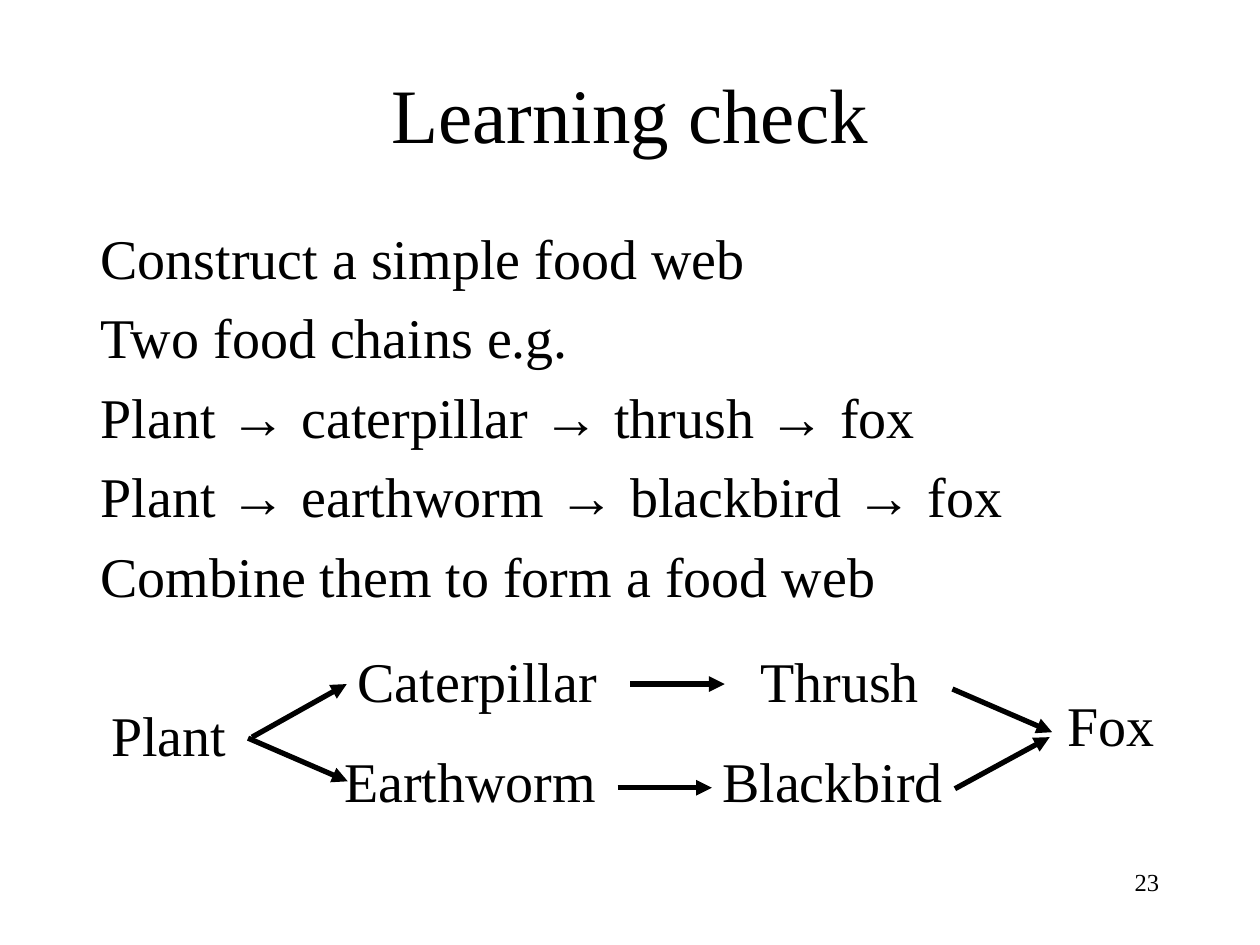
from lxml import etree
from pptx import Presentation
from pptx.dml.color import RGBColor
from pptx.enum import shapes, text
from pptx.oxml import ns
from pptx.util import Cm, Pt

COLORS = {"ink": "000000", "paper": "FFFFFF"}
FONT, ARROW_FONT = "Times New Roman", "Arial"
ARROW = "→ "
INSET = Cm(0.13)

INSTRUCTIONS = [
    "Construct a simple food web",
    "Two food chains e.g.",
    "Plant → caterpillar → thrush → fox",
    "Plant → earthworm → blackbird → fox",
    "Combine them to form a food web",
]

# Lines, left, top, width, height (cm), alignment
WEB_LABELS = [
    (["Plant"], 2.11, 14, 2.97, 1.52, "LEFT"),
    (["Caterpillar", "Earthworm "], 6.35, 12.9, 6.55, 3.5, "CENTER"),
    (["Thrush", "Blackbird "], 14.07, 12.9, 5.72, 3.5, "CENTER"),
    (["Fox"], 21.39, 13.79, 3.18, 1.52, "LEFT"),
]

# Start x, start y, end x, end y (cm)
WEB_ARROWS = [
    (5.08, 14.86, 6.99, 13.79),    # plant to caterpillar
    (5, 14.88, 7.01, 15.75),       # plant to earthworm
    (19.25, 15.9, 21.16, 14.86),   # blackbird to fox
    (19.2, 13.89, 21.21, 14.76),   # thrush to fox
    (12.7, 13.79, 14.61, 13.79),   # caterpillar to thrush
    (12.45, 15.88, 14.35, 15.88),  # earthworm to blackbird
]


def color(name):
    return RGBColor.from_string(COLORS[name])


def add_run(paragraph, words, size, font):
    run = paragraph.add_run()
    run.text = words
    run.font.size = Pt(size)
    run.font.name = font
    run.font.color.rgb = color("ink")


def add_text(slide, lines, left, top, width, height, *, size=32,
             align="LEFT", anchor="TOP", gap=0, wrap=True):
    """Add one paragraph per line, with the arrows in their own font."""
    box = slide.shapes.add_textbox(Cm(left), Cm(top), Cm(width), Cm(height))
    frame = box.text_frame
    frame.word_wrap = wrap
    frame.vertical_anchor = text.MSO_ANCHOR[anchor]
    frame.margin_left = frame.margin_right = INSET
    frame.margin_top = frame.margin_bottom = INSET
    for index, line in enumerate(lines):
        paragraph = frame.add_paragraph() if index else frame.paragraphs[0]
        paragraph.alignment = text.PP_ALIGN[align]
        paragraph.space_before = Pt(gap if index else 0)
        for step, words in enumerate(line.split(ARROW)):
            if step:
                add_run(paragraph, ARROW, size, ARROW_FONT)
            add_run(paragraph, words, size, FONT)


def add_arrow(slide, *ends):
    arrow = slide.shapes.add_connector(
        shapes.MSO_CONNECTOR.STRAIGHT, *(Cm(end) for end in ends))
    arrow.line.width = Pt(3)
    arrow.line.color.rgb = color("ink")
    etree.SubElement(arrow.line._get_or_add_ln(), ns.qn("a:tailEnd"),
                     type="triangle")
    etree.SubElement(arrow._element.spPr, ns.qn("a:effectLst"))


def main():
    deck = Presentation()
    deck.slide_width, deck.slide_height = Cm(25.4), Cm(19.05)
    slide = deck.slides.add_slide(deck.slide_layouts[6])
    slide.background.fill.solid()
    slide.background.fill.fore_color.rgb = color("paper")

    add_text(slide, ["23"], 22.71, 17.35, 0.79, 0.79, size=14,
             align="RIGHT", wrap=False)
    add_text(slide, ["Learning check"], 1.9, 0.69, 21.6, 3.18, size=44,
             align="CENTER", anchor="MIDDLE")
    add_text(slide, INSTRUCTIONS, 1.9, 4.37, 21.6, 8.13, gap=7)
    for lines, left, top, width, height, align in WEB_LABELS:
        add_text(slide, lines, left, top, width, height, align=align, gap=19)
    for ends in WEB_ARROWS:
        add_arrow(slide, *ends)

    deck.save("out.pptx")


if __name__ == "__main__":
    main()
